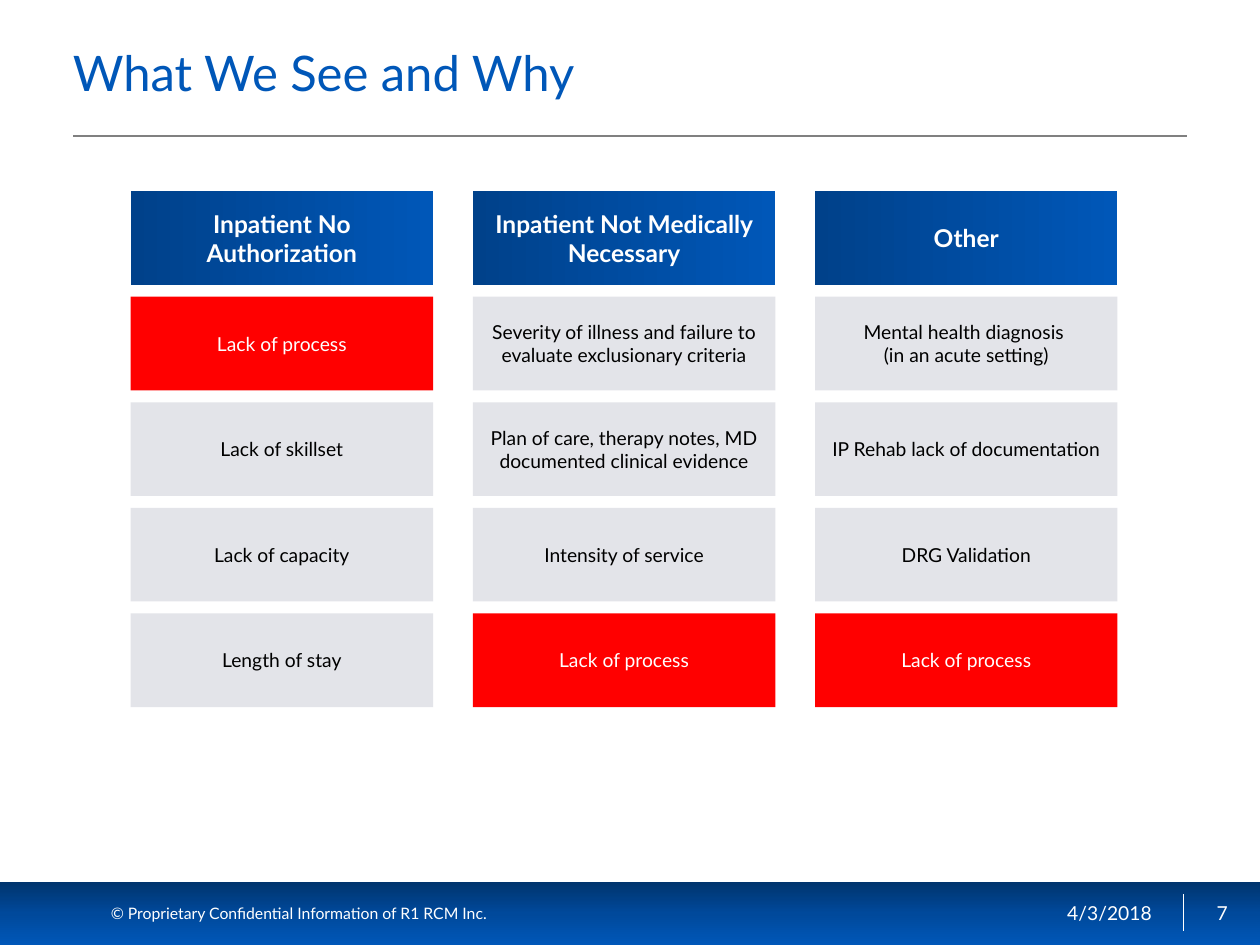
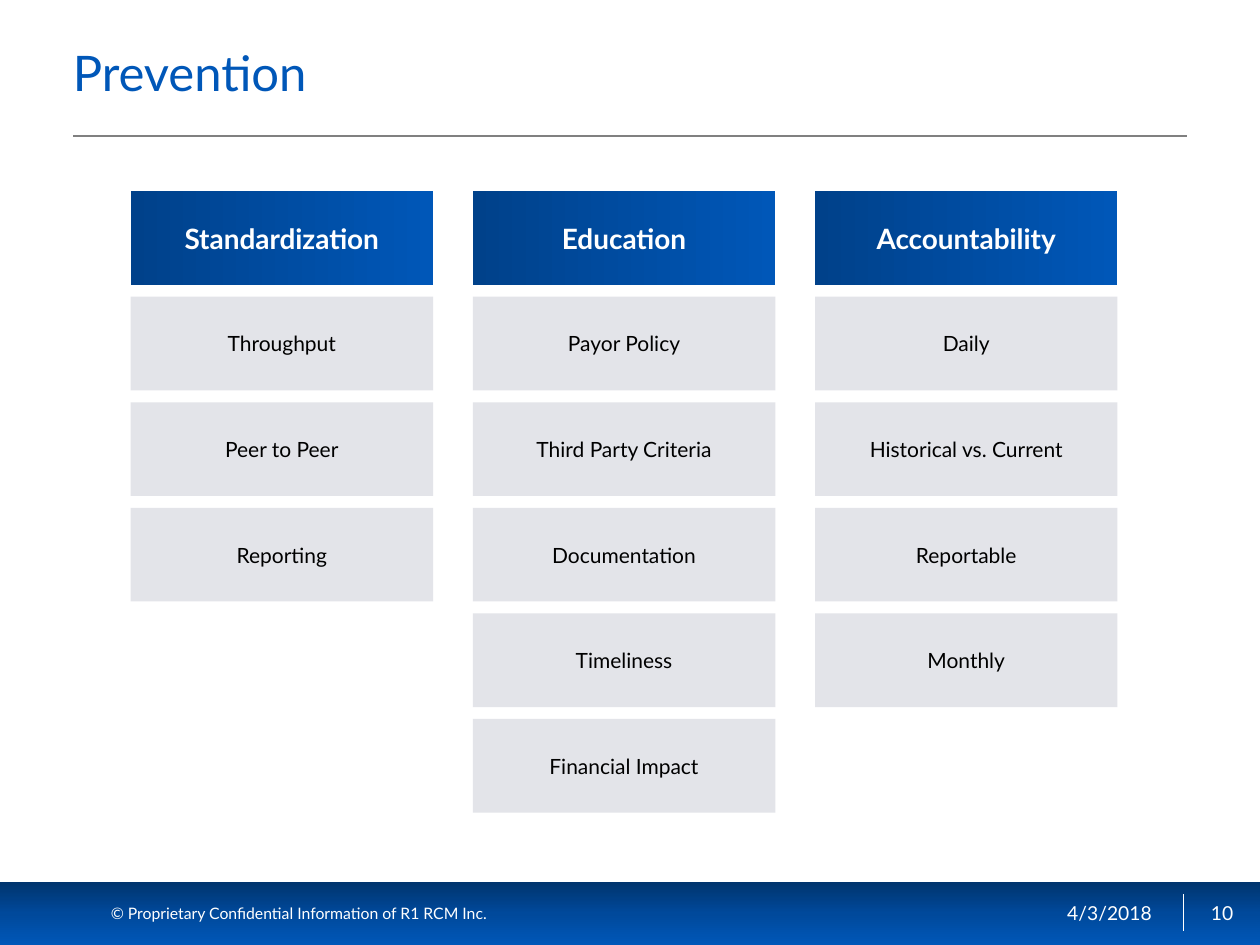
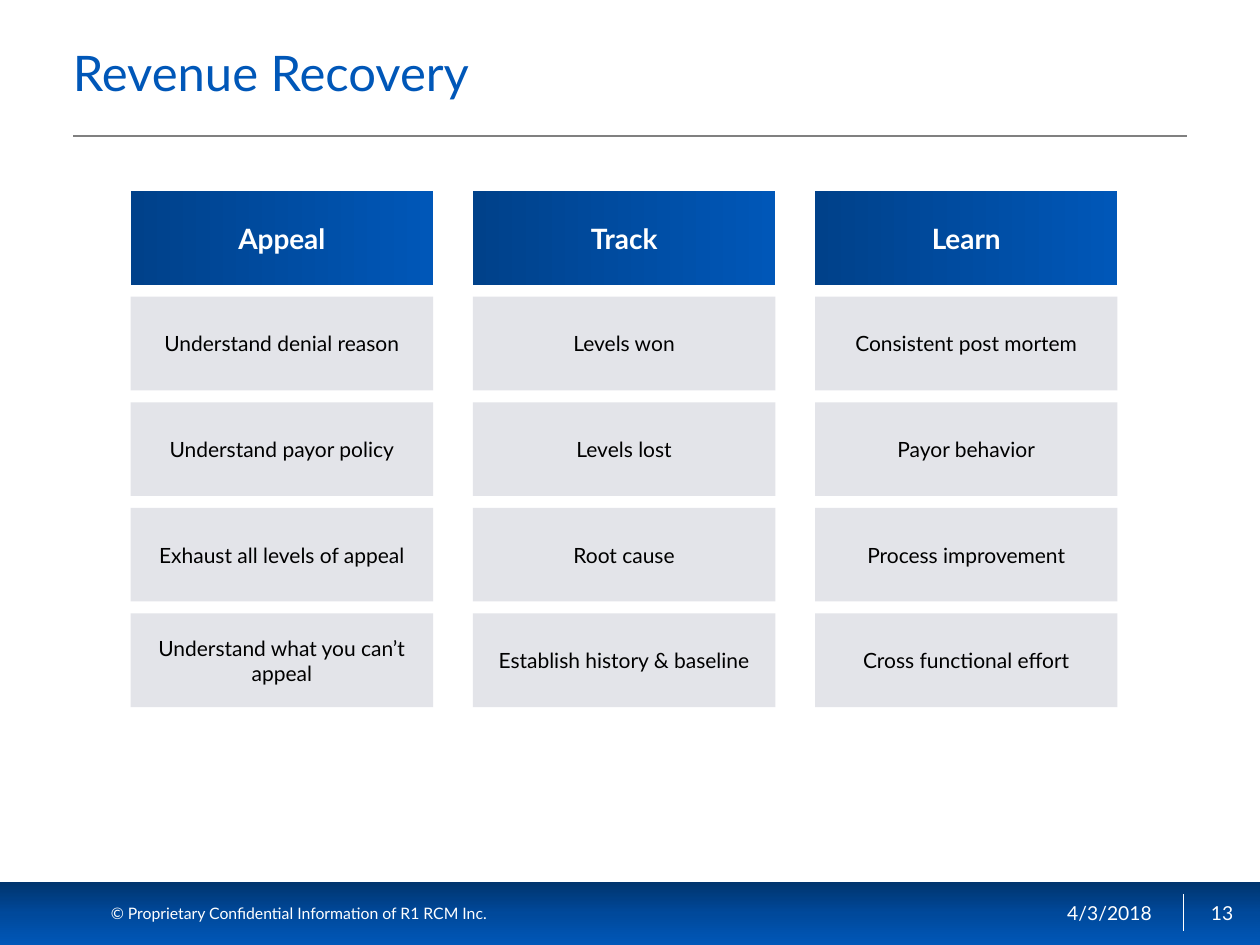
from pptx import Presentation
from pptx.dml.color import RGBColor
from pptx.enum.shapes import MSO_CONNECTOR, MSO_SHAPE
from pptx.enum.text import MSO_ANCHOR, PP_ALIGN
from pptx.oxml.ns import qn
from pptx.util import Pt
from lxml import etree

RECT, PLATE = MSO_SHAPE.RECTANGLE, MSO_SHAPE.PENTAGON
STRAIGHT = MSO_CONNECTOR.STRAIGHT
MIDDLE = MSO_ANCHOR.MIDDLE
LEFT, CENTER, RIGHT = PP_ALIGN.LEFT, PP_ALIGN.CENTER, PP_ALIGN.RIGHT

# Shared look
FONT = "Lato"
BLUE, WHITE, BLACK = "0057B8", "FFFFFF", "000000"
RED, PALE, GRAY = "FF0000", "E3E4E9", "808080"
HEAD_FADE = [(0, "00418A"), (100, BLUE)]
BAND_FADE = [(0, "00346D"), (50, "00499B"), (100, BLUE)]
DATE = "4/3/2018"
NOTICE = "© Proprietary Confidential Information of R1 RCM Inc."

# Grid of boxes
GRID_X, GRID_Y = 74.7, 109.2
BOX_W, BOX_H = 172.8, 53.5
STEP_X, STEP_Y = 195.55, 60.33

# Title, page number, head size, item size, columns (head first)
ALERT = "Lack of process"
SLIDES = [
    ("What We See and Why", 7, 14, 11, [
        ["Inpatient No Authorization", ALERT, "Lack of skillset",
         "Lack of capacity", "Length of stay"],
        ["Inpatient Not Medically Necessary",
         "Severity of illness and failure to evaluate exclusionary criteria",
         "Plan of care, therapy notes, MD documented clinical evidence",
         "Intensity of service", ALERT],
        ["Other", "Mental health diagnosis \v(in an acute setting)",
         "IP Rehab lack of documentation", "DRG Validation", ALERT],
    ]),
    ("Prevention", 10, 16, 12, [
        ["Standardization", "Throughput", "Peer to Peer", "Reporting"],
        ["Education", "Payor Policy", "Third Party Criteria",
         "Documentation", "Timeliness", "Financial Impact"],
        ["Accountability", "Daily", "Historical vs. Current",
         "Reportable", "Monthly"],
    ]),
    ("Revenue Recovery", 13, 16, 12, [
        ["Appeal", "Understand denial reason", "Understand payor policy",
         "Exhaust all levels of appeal", "Understand what you can’t appeal"],
        ["Track", "Levels won", "Levels lost", "Root cause",
         "Establish history & baseline"],
        ["Learn", "Consistent post mortem", "Payor behavior",
         "Process improvement", "Cross functional effort"],
    ]),
]


def color(code):
    return RGBColor.from_string(code)


def fade(shape, stops, angle):
    """Fill with a linear gradient; angle runs counterclockwise."""
    shape.fill.gradient()
    shape.fill.gradient_angle = angle
    items = shape._element.spPr.find(qn("a:gradFill")).find(qn("a:gsLst"))
    for old in list(items):
        items.remove(old)
    for place, code in stops:
        stop = etree.SubElement(items, qn("a:gs"), pos=str(place * 1000))
        etree.SubElement(stop, qn("a:srgbClr"), val=code)


def write(shape, text, size, code, align=LEFT, bold=False):
    frame = shape.text_frame
    frame.word_wrap = True
    frame.vertical_anchor = MIDDLE
    frame.text = text
    para = frame.paragraphs[0]
    para.alignment = align
    for run in para.runs:
        font = run.font
        font.name, font.size, font.bold = FONT, Pt(size), bold
        font.color.rgb = color(code)
    return para


def label(slide, area, text, size, code, align=LEFT):
    box = slide.shapes.add_textbox(*map(Pt, area))
    return write(box, text, size, code, align)


def block(slide, kind, area, fill, angle=0):
    """Add a borderless shape with a plain or a gradient fill."""
    shape = slide.shapes.add_shape(kind, *map(Pt, area))
    shape.shadow.inherit = False
    shape.line.fill.background()
    if isinstance(fill, str):
        shape.fill.solid()
        shape.fill.fore_color.rgb = color(fill)
    else:
        fade(shape, fill, angle)
    return shape


def rule(slide, ends, code, width):
    line = slide.shapes.add_connector(STRAIGHT, *map(Pt, ends))
    line.line.color.rgb = color(code)
    line.line.width = Pt(width)
    etree.SubElement(line._element.spPr, qn("a:effectLst"))


def frame_page(slide, title, page):
    # Footer band
    block(slide, RECT, (0, 504, 720, 36), BAND_FADE, 270)
    rule(slide, (676.5, 511, 676.5, 532), WHITE, 0.75)
    label(slide, (486, 506, 179.3, 31), DATE, 11, WHITE, RIGHT)
    label(slide, (676.8, 506, 43.2, 31), str(page), 11, WHITE, CENTER)
    label(slide, (56.2, 512.6, 336, 18), NOTICE, 9, WHITE)
    # Title and its rule
    rule(slide, (41.8, 77.6, 678.2, 77.6), GRAY, 1)
    para = label(slide, (34.6, 10.8, 643.7, 67), title, 28, BLUE)
    para.line_spacing = 0.8


def grid(slide, columns, head, item):
    for col, texts in enumerate(columns):
        for row, text in enumerate(texts):
            if row == 0:
                fill, ink, size = HEAD_FADE, WHITE, head
            elif text == ALERT:
                fill, ink, size = RED, WHITE, item
            else:
                fill, ink, size = PALE, BLACK, item
            area = (GRID_X + col * STEP_X, GRID_Y + row * STEP_Y, BOX_W, BOX_H)
            box = block(slide, PLATE, area, fill)
            box.adjustments[0] = 0
            write(box, text, size, ink, CENTER, bold=row == 0)


def main():
    deck = Presentation()
    deck.slide_width, deck.slide_height = Pt(720), Pt(540)
    blank = deck.slide_layouts[6]
    for title, page, head, item, columns in SLIDES:
        slide = deck.slides.add_slide(blank)
        frame_page(slide, title, page)
        grid(slide, columns, head, item)
    deck.save("out.pptx")


if __name__ == "__main__":
    main()
